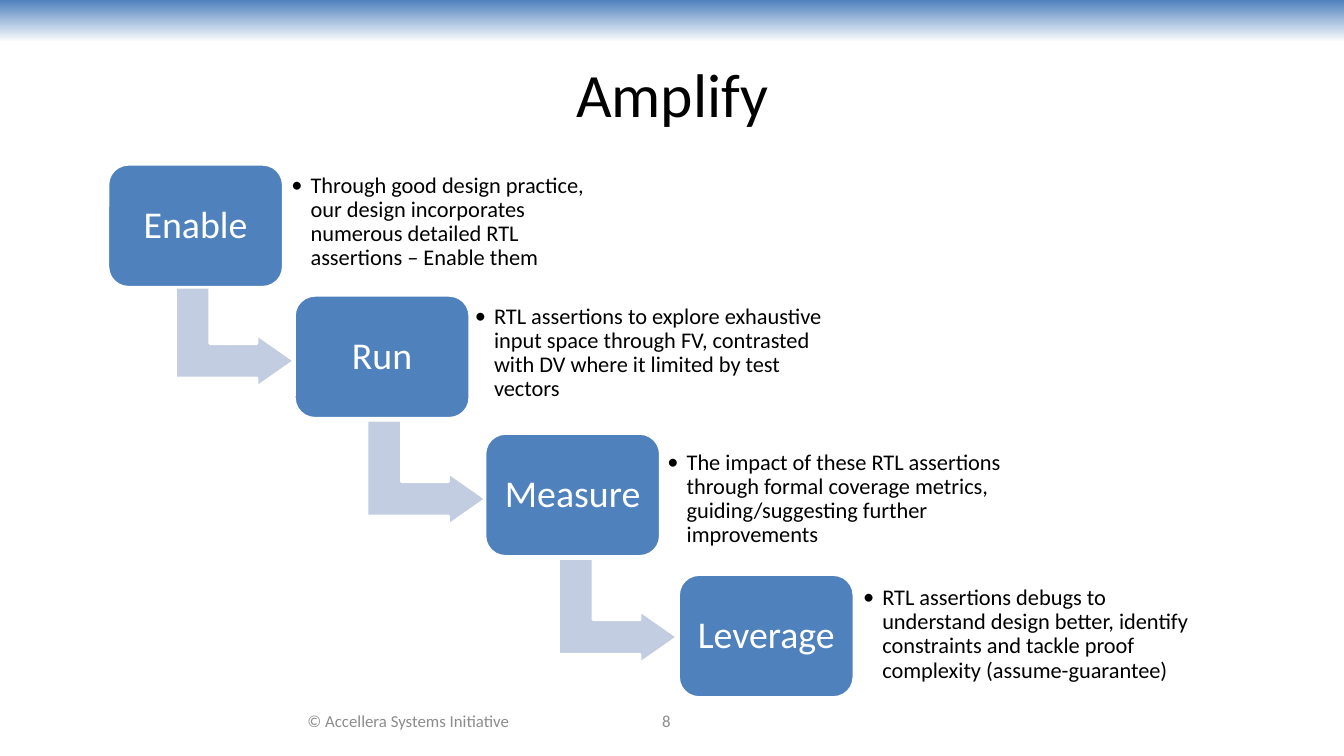
from typing import NamedTuple, Optional

import pptx
import pptx.dml.color
import pptx.enum.shapes
import pptx.enum.text
import pptx.oxml
import pptx.oxml.ns
import pptx.util

Inches = pptx.util.Inches
Pt = pptx.util.Pt
Shape = pptx.enum.shapes.MSO_SHAPE
Align = pptx.enum.text.PP_ALIGN

BLUE, PALE, WHITE, BLACK, GREY = "4F81BD", "C2CDE1", "FFFFFF", "000000", "8C8C8C"
FONT = "Calibri"
CARD_SIZE = (1.74, 1.22)
ARROW_SIZE = (1.04, 1.18)
NOTE_HEIGHT = 0.99
BULLET_INDENT = 0.19


class Step(NamedTuple):
    name: str
    note: str
    card: tuple[float, float]
    note_at: tuple[float, float]
    note_width: float
    arrow: Optional[tuple[float, float]] = None


class Label(NamedTuple):
    text: str
    area: tuple[float, float, float, float]
    size: int
    color: str


STEPS = [
    Step("Enable",
         "Through good design practice, our design incorporates numerous "
         "detailed RTL assertions – Enable them",
         (1.07, 1.63), (2.82, 1.71), 3.15, (1.81, 2.73)),
    Step("Run",
         "RTL assertions to explore exhaustive input space through FV, "
         "contrasted with DV where it limited by test vectors",
         (2.92, 2.93), (4.64, 3.01), 3.86, (3.71, 4.1)),
    Step("Measure",
         "The impact of these RTL assertions through formal coverage metrics, "
         "guiding/suggesting further improvements",
         (4.81, 4.3), (6.55, 4.46), 3.72, (5.61, 5.47)),
    Step("Leverage",
         "RTL assertions debugs to understand design better, identify "
         "constraints and tackle proof complexity (assume-guarantee)",
         (6.73, 5.7), (8.49, 5.8), 3.55),
]

LABELS = [
    Label("Amplify", (0.67, 0.3, 12, 1.25), 44, BLACK),
    Label("© Accellera Systems Initiative", (2.44, 6.95, 3.22, 0.4), 12, GREY),
    Label("8", (5.33, 6.95, 2.56, 0.4), 12, GREY),
]


def rgb(color: str) -> pptx.dml.color.RGBColor:
    return pptx.dml.color.RGBColor.from_string(color)


def add_bullet(para) -> None:
    properties = para._p.get_or_add_pPr()
    properties.set("marL", str(Inches(BULLET_INDENT)))
    properties.set("indent", str(-Inches(BULLET_INDENT)))
    for mark in (f'buFont {{}} typeface="{FONT}"', 'buChar {} char="•"'):
        names = pptx.oxml.ns.nsdecls("a")
        properties.append(pptx.oxml.parse_xml(f"<a:{mark.format(names)}/>"))


def write(box, text: str, size: int, color: str, align=Align.CENTER,
          inset: Optional[float] = None, bullet: bool = False):
    """Fill a box with one vertically centred paragraph and return it."""
    frame = box.text_frame
    frame.word_wrap = True
    frame.vertical_anchor = pptx.enum.text.MSO_ANCHOR.MIDDLE
    if inset is not None:
        frame.margin_left = frame.margin_right = Inches(inset)
        frame.margin_top = frame.margin_bottom = Inches(inset)
    para = frame.paragraphs[0]
    para.text = text
    para.alignment = align
    if bullet:
        add_bullet(para)
    para.font.name = FONT
    para.font.size = Pt(size)
    para.font.color.rgb = rgb(color)
    return para


def add_solid(page, kind, at: tuple[float, float],
              size: tuple[float, float], color: str):
    shape = page.shapes.add_shape(kind, *map(Inches, at + size))
    shape.shadow.inherit = False
    shape.fill.solid()
    shape.fill.fore_color.rgb = rgb(color)
    shape.line.color.rgb = rgb(WHITE)
    shape.line.width = Pt(2)
    return shape


def add_header_band(page) -> None:
    band = page.shapes.add_shape(
        Shape.RECTANGLE, 0, 0, Inches(13.33), Inches(0.42))
    band.shadow.inherit = False
    band.line.fill.background()
    band.fill.gradient()
    band.fill.gradient_angle = 270
    for stop, color, position in zip(band.fill.gradient_stops, (BLUE, WHITE), (0, 1)):
        stop.color.rgb = rgb(color)
        stop.position = position


def add_label(page, label: Label) -> None:
    box = page.shapes.add_textbox(*map(Inches, label.area))
    write(box, label.text, label.size, label.color)


def add_step(page, step: Step) -> None:
    if step.arrow:
        arrow = add_solid(page, Shape.BENT_UP_ARROW, step.arrow, ARROW_SIZE, PALE)
        arrow.rotation = 90
        for index, value in enumerate((0.328, 0.25, 0.358)):
            arrow.adjustments[index] = value

    card = add_solid(page, Shape.ROUNDED_RECTANGLE, step.card, CARD_SIZE, BLUE)
    card.adjustments[0] = 0.167
    write(card, step.name, 27, WHITE, inset=0.08).line_spacing = 0.9

    note = page.shapes.add_textbox(
        *map(Inches, step.note_at + (step.note_width, NOTE_HEIGHT)))
    para = write(note, step.note, 16, BLACK, Align.LEFT, inset=0.07, bullet=True)
    para.line_spacing = 0.9


def main() -> None:
    deck = pptx.Presentation()
    deck.slide_width = Inches(13.33)
    deck.slide_height = Inches(7.5)
    page = deck.slides.add_slide(deck.slide_layouts[6])
    add_header_band(page)
    for label in LABELS:
        add_label(page, label)
    for step in STEPS:
        add_step(page, step)
    deck.save("out.pptx")


if __name__ == "__main__":
    main()
